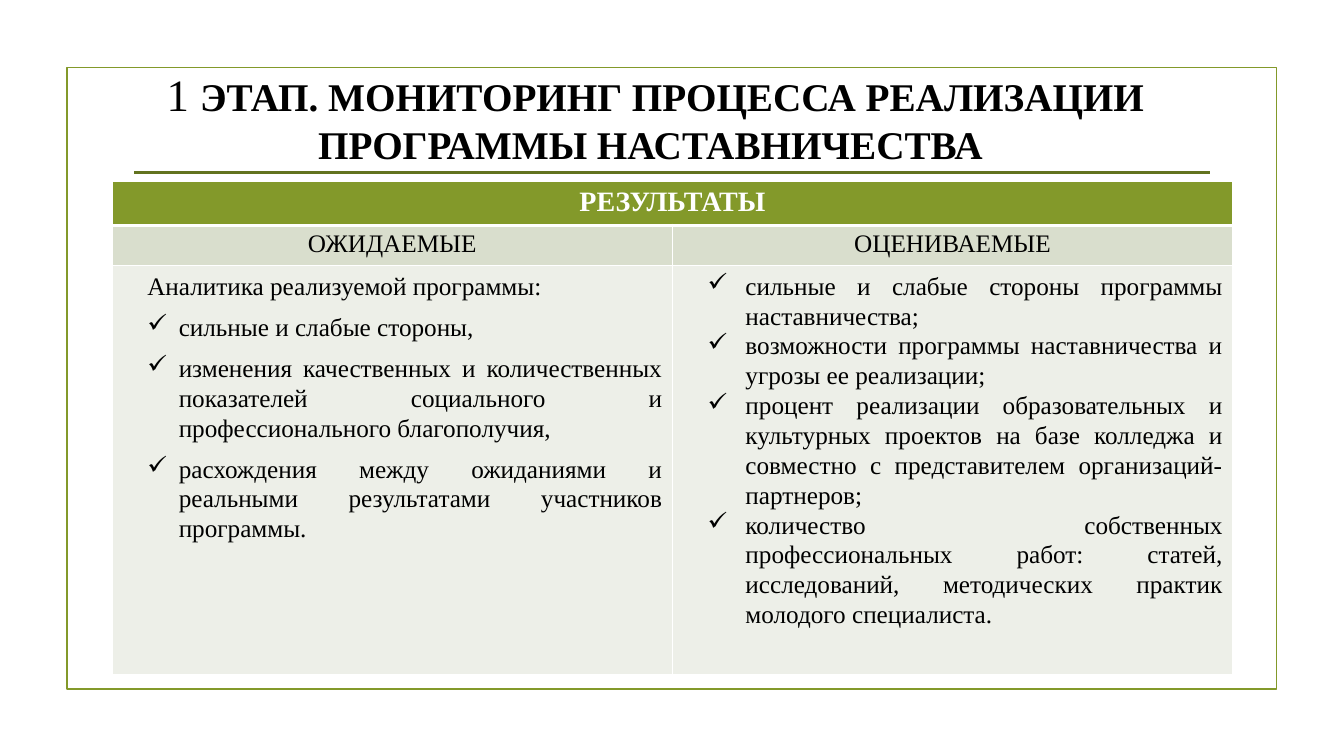
import pptx
import pptx.dml.color
import pptx.enum.shapes
import pptx.enum.text
import pptx.oxml
import pptx.oxml.ns
import pptx.util
import lxml.etree

Pt = pptx.util.Pt
qn = pptx.oxml.ns.qn
ALIGN = pptx.enum.text.PP_ALIGN
ANCHOR = pptx.enum.text.MSO_ANCHOR

BLACK, WHITE = "000000", "FFFFFF"
GREEN, DARK_GREEN = "83992A", "62731F"
BAND, PALE = "D9DECD", "EDEFE8"


def color(value):
    return pptx.dml.color.RGBColor.from_string(value)


def assign(target, values):
    for name, value in values.items():
        setattr(target, name, value)


class SlideBuilder:
    """Holds the style and the current slide."""

    font_name = "Times New Roman"
    border_width = 1

    def __init__(self, slide):
        self.slide = slide

    def run(self, paragraph, text, size, fill=BLACK, bold=False):
        run = paragraph.add_run()
        run.text = text
        assign(run.font, {"name": self.font_name, "size": Pt(size), "bold": bold})
        run.font.color.rgb = color(fill)

    def frame(self, left, top, width, height, line, weight):
        shape = self.slide.shapes.add_shape(
            pptx.enum.shapes.MSO_SHAPE.RECTANGLE, Pt(left), Pt(top), Pt(width), Pt(height))
        shape.shadow.inherit = False
        shape.fill.background()
        shape.line.color.rgb = color(line)
        shape.line.width = Pt(weight)

    def title(self, left, top, width, height, runs):
        box = self.slide.shapes.add_textbox(Pt(left), Pt(top), Pt(width), Pt(height))
        assign(box.text_frame, {"word_wrap": True, "vertical_anchor": ANCHOR.MIDDLE})
        paragraph = box.text_frame.paragraphs[0]
        paragraph.alignment = ALIGN.CENTER
        for text, size, bold in runs:
            self.run(paragraph, text, size, bold=bold)

    def rule(self, left, right, y, line, weight):
        connector = self.slide.shapes.add_connector(
            pptx.enum.shapes.MSO_CONNECTOR.STRAIGHT, Pt(left), Pt(y), Pt(right), Pt(y))
        connector.line.color.rgb = color(line)
        connector.line.width = Pt(weight)
        properties = connector._element.find(qn("p:spPr"))
        lxml.etree.SubElement(properties, qn("a:effectLst"))

    def table(self, left, top, widths, heights):
        table = self.slide.shapes.add_table(
            len(heights), len(widths), Pt(left), Pt(top),
            Pt(sum(widths)), Pt(sum(heights))).table
        assign(table, {"first_row": False, "horz_banding": False})
        for column, width in zip(table.columns, widths):
            column.width = Pt(width)
        for row, height in zip(table.rows, heights):
            row.height = Pt(height)
        return table

    def cell(self, cell, fill, **edges):
        cell.fill.solid()
        cell.fill.fore_color.rgb = color(fill)
        properties = cell._tc.get_or_add_tcPr()
        for index, side in enumerate("LRTB"):
            width = Pt(edges.get(side, self.border_width))
            properties.insert(index, pptx.oxml.parse_xml(
                f'<a:ln{side} {pptx.oxml.ns.nsdecls("a")} w="{int(width)}"><a:solidFill>'
                f'<a:srgbClr val="{WHITE}"/></a:solidFill></a:ln{side}>'))

    def heading(self, cell, text, size, fill=BLACK, bold=False):
        paragraph = cell.text_frame.paragraphs[0]
        paragraph.alignment = ALIGN.CENTER
        self.run(paragraph, text, size, fill, bold)

    def body(self, cell, items, margin, indent, space_after, intro=None):
        lines = [(intro, False)] if intro else []
        lines += [(item, True) for item in items]
        frame = cell.text_frame
        for index, (text, checked) in enumerate(lines):
            paragraph = frame.add_paragraph() if index else frame.paragraphs[0]
            properties = paragraph._p.get_or_add_pPr()
            # The intro starts where the check marks stand
            hanging = indent if checked else 0
            properties.set("marL", str(int(Pt(margin if checked else margin - indent))))
            properties.set("indent", str(-int(Pt(hanging))))
            if checked:
                lxml.etree.SubElement(properties, qn("a:buChar")).set("char", "✓")
            assign(paragraph, {"alignment": ALIGN.JUSTIFY, "line_spacing": 1.07,
                               "space_after": Pt(space_after)})
            self.run(paragraph, text, 18)


def main():
    presentation = pptx.Presentation()
    assign(presentation, {"slide_width": Pt(960), "slide_height": Pt(540)})
    builder = SlideBuilder(presentation.slides.add_slide(presentation.slide_layouts[6]))

    # Frame, title and rule
    builder.frame(47.8, 48.2, 864, 444.2, GREEN, 1.25)
    builder.title(16.6, 43.9, 902.9, 79.9, [
        ("1 ", 32, False),
        ("ЭТАП. МОНИТОРИНГ ПРОЦЕССА РЕАЛИЗАЦИИ ПРОГРАММЫ НАСТАВНИЧЕСТВА ", 28, True)])
    builder.rule(96, 864, 123.4, DARK_GREEN, 2.25)

    # Results table
    table = builder.table(80, 129.8, [400.3, 400.3], [30.6, 28.8, 292.3])
    table.cell(0, 0).merge(table.cell(0, 1))
    for column in range(2):
        builder.cell(table.cell(0, column), GREEN, B=3)
        builder.cell(table.cell(1, column), BAND, T=3)
        builder.cell(table.cell(2, column), PALE)
    builder.heading(table.cell(0, 0), "РЕЗУЛЬТАТЫ", 20, WHITE, True)
    for column, text in enumerate(["ОЖИДАЕМЫЕ", "ОЦЕНИВАЕМЫЕ"]):
        builder.heading(table.cell(1, column), text, 18)

    # Expected results
    builder.body(table.cell(2, 0), [
        "сильные и слабые стороны, ",
        "изменения качественных и количественных показателей социального и "
        "профессионального благополучия, ",
        "расхождения между ожиданиями и реальными результатами участников программы. ",
    ], margin=40.5, indent=22.5, space_after=8, intro="Аналитика реализуемой программы: ")

    # Assessed results
    builder.body(table.cell(2, 1), [
        "сильные и слабые стороны программы наставничества; ",
        "возможности программы наставничества и угрозы ее реализации; ",
        "процент реализации образовательных и культурных проектов на базе колледжа и "
        "совместно с представителем организаций-партнеров; ",
        "количество собственных профессиональных работ: статей, исследований, "
        "методических практик молодого специалиста. ",
    ], margin=45, indent=27, space_after=0)

    presentation.save("out.pptx")


if __name__ == "__main__":
    main()
